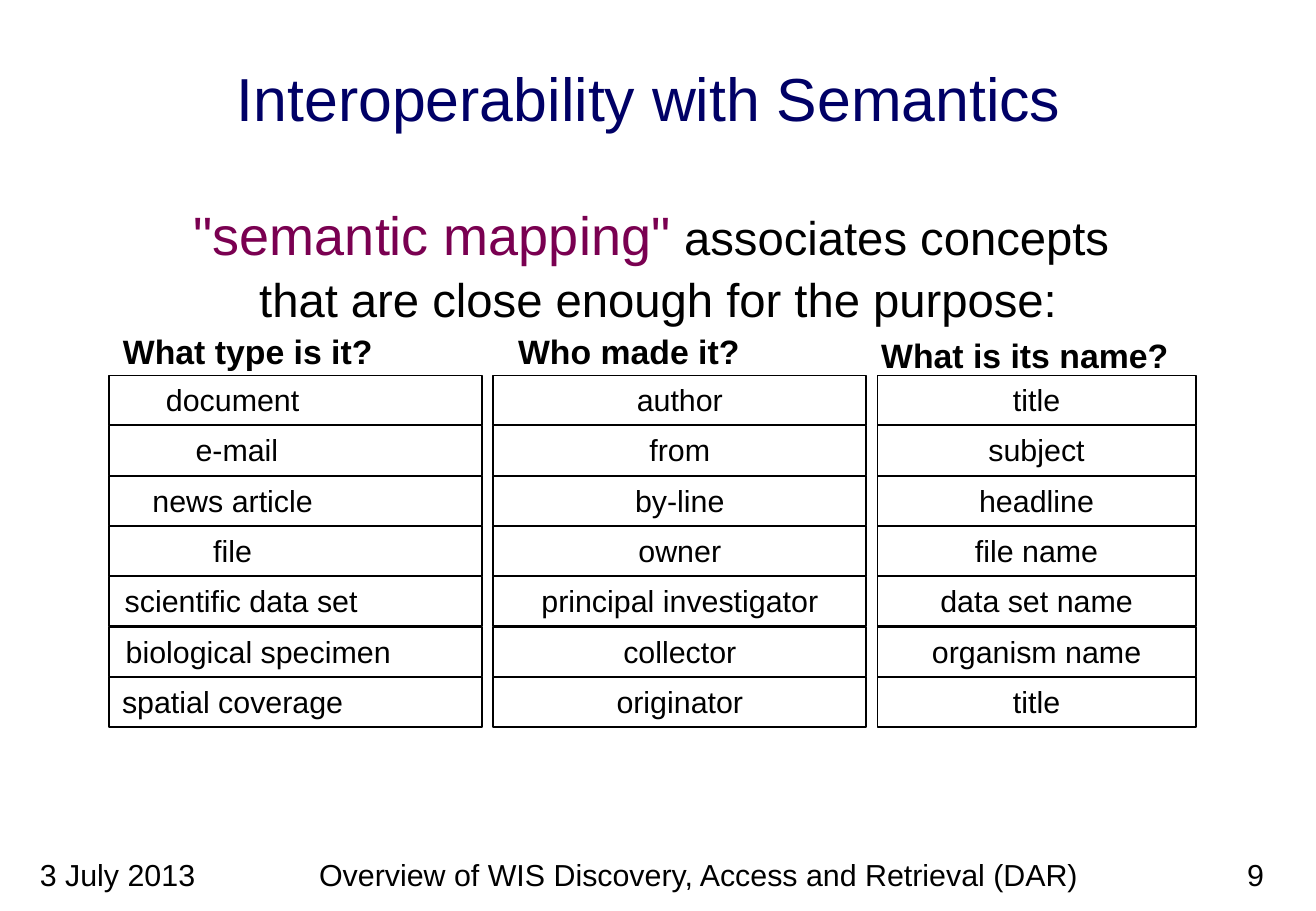
from pptx import Presentation
from pptx.dml.color import RGBColor
from pptx.enum.shapes import MSO_SHAPE
from pptx.enum.text import MSO_ANCHOR, PP_ALIGN
from pptx.util import Inches, Pt

BLACK = RGBColor(0x00, 0x00, 0x00)
NAVY = RGBColor(0x00, 0x00, 0x66)
PLUM = RGBColor(0x7A, 0x00, 0x51)
LEFT, CENTER, RIGHT = PP_ALIGN.LEFT, PP_ALIGN.CENTER, PP_ALIGN.RIGHT
TOP, BOTTOM = MSO_ANCHOR.TOP, MSO_ANCHOR.BOTTOM
RECTANGLE = MSO_SHAPE.RECTANGLE

ROW_PITCH, ROW_HEIGHT = 0.414, 0.41
COLUMNS = [(0, 3.07), (3.16, 3.07), (6.32, 2.62)]
HEADINGS = [
    ("What type is it?", (0.9, 2.67, 3.07, 0.43), 0.84),
    ("Who made it?", (4.15, 2.67, 2.89, 0.43), 0.89),
    ("What is its name?", (7.13, 2.71, 3.07, 0.43), 0.51),
]
ROWS = [
    (("document", "author", "title"), 1.09),
    (("e-mail", "from", "subject"), 1.02),
    (("news article", "by-line", "headline"), 1.09),
    (("file", "owner", "file name"), 1.09),
    (("scientific data set", "principal investigator", "data set name"), 0.95),
    (("biological specimen", "collector", "organism name"), 0.67),
    (("spatial coverage", "originator", "title"), 1.09),
]
FOOTER = [
    ("3 July 2013", 0, 1.84, LEFT),
    ("Overview of WIS Discovery, Access and Retrieval (DAR) ", 1.89, 7.33, CENTER),
    ("9", 9.31, 0.96, RIGHT),
]


def set_text(shape, runs, alignment=CENTER, anchor=TOP, left=0.1, right=0.1):
    """Fill a shape with one paragraph of (text, font values) runs."""
    frame = shape.text_frame
    frame_format = {
        "word_wrap": True,
        "vertical_anchor": anchor,
        "margin_left": Inches(left),
        "margin_right": Inches(right),
        "margin_top": Inches(0.05),
        "margin_bottom": Inches(0.05),
    }
    for name, value in frame_format.items():
        setattr(frame, name, value)
    paragraph = frame.paragraphs[0]
    paragraph.alignment = alignment
    for text, values in runs:
        font_format = {"name": "Arial", "size": Pt(18), "bold": False} | values
        color = font_format.pop("color", BLACK)
        for index, line in enumerate(text.split("\n")):
            if index:
                paragraph.add_line_break()
            run = paragraph.add_run()
            run.text = line
            for name, value in font_format.items():
                setattr(run.font, name, value)
            run.font.color.rgb = color
    return paragraph


def add_text_box(slide, box, runs, **layout):
    """Add a text box at the given box in inches."""
    shape = slide.shapes.add_textbox(*map(Inches, box))
    return set_text(shape, runs, **layout)


def add_title(slide, box):
    """Place the slide title in its placeholder."""
    title = slide.shapes.title
    title.left, title.top, title.width, title.height = map(Inches, box)
    runs = [("Interoperability with Semantics ", {"size": Pt(36), "color": NAVY})]
    set_text(title, runs, anchor=BOTTOM)


def add_definition(slide, box):
    """Add the statement that explains semantic mapping."""
    paragraph = add_text_box(slide, box, [
        ('"semantic mapping"', {"size": Pt(32), "color": PLUM}),
        (" associates concepts \nthat are close enough for the purpose:", {"size": Pt(28)}),
    ])
    paragraph.line_spacing = 1.07


def add_headings(slide):
    """Add the question above each column."""
    for text, box, right in HEADINGS:
        runs = [(text, {"size": Pt(20), "bold": True})]
        add_text_box(slide, box, runs, left=0.05, right=right)


def add_mapping_grid(slide, left, top):
    """Add the grid of outlined terms from its top left corner."""
    for row, (terms, first_right) in enumerate(ROWS):
        for column, (term, (offset, width)) in enumerate(zip(terms, COLUMNS)):
            box = (left + offset, top + row * ROW_PITCH, width, ROW_HEIGHT)
            cell = slide.shapes.add_shape(RECTANGLE, *map(Inches, box))
            cell.shadow.inherit = False
            cell.fill.background()
            cell.line.color.rgb = BLACK
            cell.line.width = Pt(1)
            right = 0.05 if column else first_right
            set_text(cell, [(term, {})], left=0.05, right=right)


def add_footer(slide, left, top, height):
    """Add the date, presentation name and slide number."""
    for text, offset, width, alignment in FOOTER:
        box = (left + offset, top, width, height)
        add_text_box(slide, box, [(text, {})], alignment=alignment)


def main():
    """Build and save the presentation."""
    presentation = Presentation()
    presentation.slide_width = Inches(10.83)
    presentation.slide_height = Inches(7.5)
    slide = presentation.slides.add_slide(presentation.slide_layouts[5])
    add_title(slide, (1.35, 0.43, 8.12, 0.72))
    add_definition(slide, (1.15, 1.57, 8.53, 0.98))
    add_headings(slide)
    add_mapping_grid(slide, 0.9, 3.09)
    add_footer(slide, 0.23, 7, 0.5)
    presentation.save("out.pptx")


if __name__ == "__main__":
    main()
